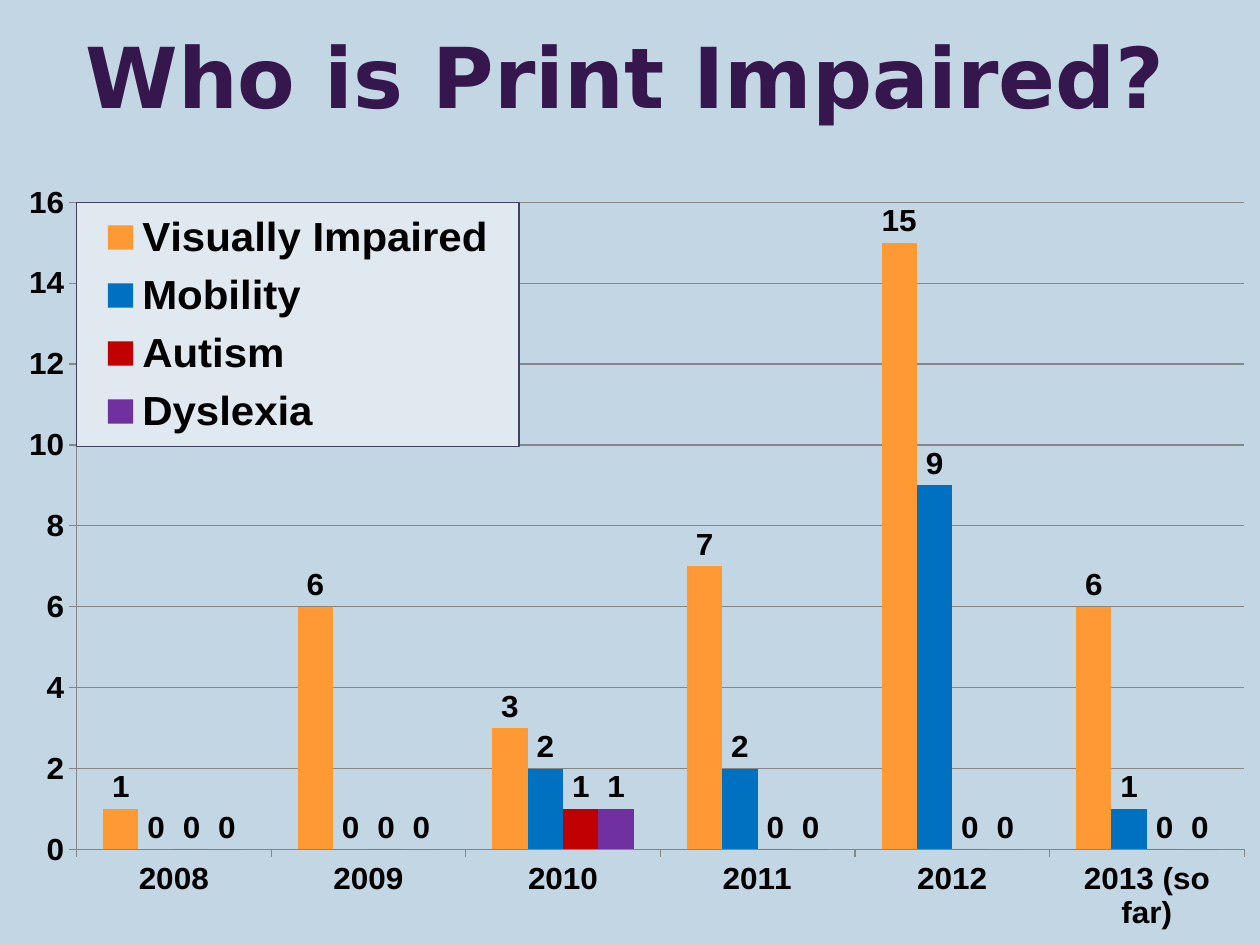
from pptx import Presentation
from pptx import util as u
from pptx.chart.data import CategoryChartData
from pptx.dml.color import RGBColor
from pptx.enum import chart as ch, text
from pptx.oxml import parse_xml
from pptx.oxml.ns import nsdecls, qn

# Content
TITLE = "Who is Print Impaired?"
YEARS = ["2008", "2009", "2010", "2011", "2012", "2013 (so far)"]
SERIES = [
    ("Visually Impaired", "orange", (1, 6, 3, 7, 15, 6)),
    ("Mobility", "blue", (0, 0, 2, 2, 9, 1)),
    ("Autism", "red", (0, 0, 1, 0, 0, 0)),
    ("Dyslexia", "purple", (0, 0, 1, 0, 0, 0)),
]
COLORS = {
    "background": "C2D6E3", "title": "36174D", "text": "000000",
    "grid": "868686", "legend": "DFE9EF", "legend_line": "404060",
    "orange": "FF9933", "blue": "0070C0", "red": "C00000", "purple": "7030A0",
}
# Fractions of the chart: left, top, width, height
PLOT_AREA = (0.05, 0.02, 0.95, 0.9)
LEGEND_AREA = (0.05, 0.02, 0.36, 0.34)


def rgb(name):
    return RGBColor.from_string(COLORS[name])


def set_font(font, size, color="text", name="Arial"):
    values = {"size": u.Pt(size), "bold": True, "name": name}
    for key, value in values.items():
        setattr(font, key, value)
    font.color.rgb = rgb(color)


def manual_layout(area, inner=False):
    target = '<c:layoutTarget val="inner"/>' if inner else ""
    modes = '<c:xMode val="edge"/><c:yMode val="edge"/>'
    sizes = "".join(f'<c:{k} val="{v}"/>' for k, v in zip("xywh", area))
    return parse_xml(f'<c:layout {nsdecls("c")}><c:manualLayout>'
                     f'{target}{modes}{sizes}</c:manualLayout></c:layout>')


prs = Presentation()
prs.slide_width, prs.slide_height = u.Inches(10), u.Inches(7.5)
s = prs.slides.add_slide(prs.slide_layouts[6])
s.background.fill.solid()
s.background.fill.fore_color.rgb = rgb("background")

# Title
sp = s.shapes.add_textbox(*map(u.Inches, (0.12, -0.03, 9.69, 1.25)))
tf = sp.text_frame
tf.word_wrap = True
tf.vertical_anchor = text.MSO_ANCHOR.MIDDLE
p = tf.paragraphs[0]
p.alignment = text.PP_ALIGN.CENTER
r = p.add_run()
r.text = TITLE
set_font(r.font, 48, "title", "DejaVu Sans")

# Column chart
data = CategoryChartData()
data.categories = YEARS
for name, _, values in SERIES:
    data.add_series(name, values)
chart = s.shapes.add_chart(ch.XL_CHART_TYPE.COLUMN_CLUSTERED,
                           *map(u.Inches, (0.12, 1.47, 9.76, 5.91)), data).chart
chart.has_title = False
set_font(chart.font, 18)
plot = chart.plots[0]
plot.gap_width, plot.overlap, plot.vary_by_categories = 150, 0, False
for series, (_, color, _) in zip(plot.series, SERIES):
    series.format.fill.solid()
    series.format.fill.fore_color.rgb = rgb(color)
    labels = series.data_labels
    labels.show_value = True
    labels.position = ch.XL_LABEL_POSITION.OUTSIDE_END
    set_font(labels.font, 18)

# Axes
value_axis = chart.value_axis
for key, value in {"minimum_scale": 0, "maximum_scale": 16, "major_unit": 2,
                   "has_major_gridlines": True}.items():
    setattr(value_axis, key, value)
for axis in (chart.category_axis, value_axis):
    axis.major_tick_mark = ch.XL_TICK_MARK.OUTSIDE
    set_font(axis.tick_labels.font, 18)
for part in (chart.category_axis, value_axis, value_axis.major_gridlines):
    part.format.line.color.rgb = rgb("grid")
    part.format.line.width = u.Pt(0.75)

# Legend over the plot
chart.has_legend = True
legend = chart.legend
legend.position = ch.XL_LEGEND_POSITION.RIGHT
legend.include_in_layout = True
set_font(legend.font, 24)
overlay = legend._element.find(qn("c:overlay"))
overlay.addprevious(manual_layout(LEGEND_AREA))
overlay.addnext(parse_xml(
    f'<c:spPr {nsdecls("c", "a")}>'
    f'<a:solidFill><a:srgbClr val="{COLORS["legend"]}"/></a:solidFill>'
    f'<a:ln w="9525"><a:solidFill><a:srgbClr val="{COLORS["legend_line"]}"/>'
    '</a:solidFill></a:ln></c:spPr>'))

# Plot area placement
plot_area = chart._chartSpace.chart.plotArea
for old in plot_area.findall(qn("c:layout")):
    plot_area.remove(old)
plot_area.insert(0, manual_layout(PLOT_AREA, inner=True))

prs.save("out.pptx")
